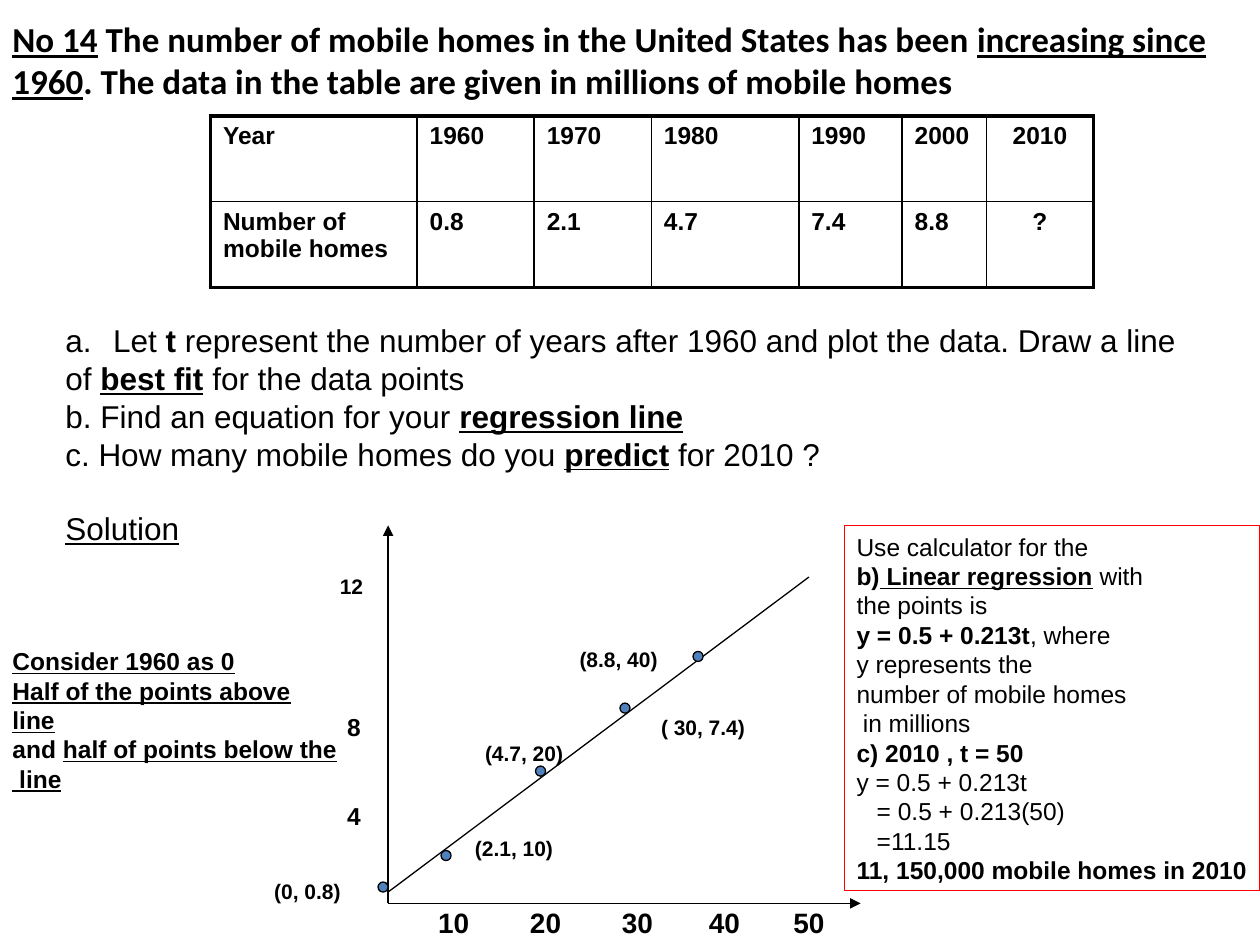
from lxml import etree
from pptx import Presentation
from pptx.dml.color import RGBColor
from pptx.enum.shapes import MSO_CONNECTOR, MSO_SHAPE
from pptx.enum.text import MSO_ANCHOR, PP_ALIGN
from pptx.oxml.ns import qn
from pptx.util import Inches, Pt

STRAIGHT = MSO_CONNECTOR.STRAIGHT
OVAL, RECTANGLE = MSO_SHAPE.OVAL, MSO_SHAPE.RECTANGLE
TOP, MIDDLE = MSO_ANCHOR.TOP, MSO_ANCHOR.MIDDLE
LEFT, CENTER = PP_ALIGN.LEFT, PP_ALIGN.CENTER

COLORS = {"black": "000000", "dot": "4F81BD", "frame": "FF0000"}

TITLE = [[
    ("No 14", "bu"),
    (" The number of mobile homes in the United States has been ", "b"),
    ("increasing since 1960", "bu"),
    (". The data in the table are given in millions of mobile homes", "b"),
]]
TABLE = [
    ["Year", "1960", "1970", "1980", "1990", "2000", "2010"],
    ["Number of mobile homes", "0.8", "2.1", "4.7", "7.4", "8.8", "?"],
]
COLUMN_WIDTHS = [1.64, 0.93, 0.93, 1.17, 0.82, 0.67, 0.85]
ROW_HEIGHT = 0.68
QUESTIONS = [
    [("Let ", ""), ("t ", "b"),
     ("represent the number of years after 1960 and plot the data. Draw a line", "")],
    [("of ", ""), ("best fit", "bu"), (" for the data points", "")],
    [("b. Find an equation for your ", ""), ("regression line", "bu")],
    [("c. How many mobile homes do you ", ""), ("predict", "bu"), (" for 2010 ?", "")],
    [("Solution", "u")],
]
NOTE = [
    [("Consider 1960 as 0", "bu")],
    [("Half of the points above\nline", "bu")],
    [("and ", "b"), ("half of points below the", "bu")],
    [(" line", "bu")],
]
ANSWER = [
    [("Use calculator for the", "")],
    [("b)", "b"), (" Linear regression", "bu"), (" with", "")],
    [("the points is", "")],
    [("y = 0.5 + 0.213t", "b"), (", where", "")],
    [("y represents the", "")],
    [("number of mobile homes", "")],
    [("in millions", "")],
    [("c) 2010 , t = 50", "b")],
    [("y = 0.5 + 0.213t", "")],
    [("= 0.5 + 0.213(50)", "")],
    [("=11.15", "")],
    [("11, 150,000 mobile homes in 2010", "b")],
]
ANSWER_INDENTS = {6: 0.05, 9: 0.16, 10: 0.16}

ORIGIN = (3.08, 7.17)
LINES = [
    (ORIGIN, (6.83, 7.17), True),
    (ORIGIN, (3.08, 4.17), True),
    ((3.08, 7.08), (6.42, 4.58), False),
]
DOT_SIZE = 0.08
DOTS = [(3, 7), (3.5, 6.75), (4.25, 6.08), (4.92, 5.58), (5.5, 5.17)]
LABELS = [
    ("(0, 0.8)", 2.44, 7.07, 12), ("(2.1, 10)", 4.08, 6.73, 12),
    ("(4.7, 20)", 4.16, 5.98, 12), ("( 30, 7.4)", 5.58, 5.77, 12),
    ("(8.8, 40)", 4.91, 5.23, 12),
    ("12", 2.79, 4.65, 12), ("8", 2.81, 5.77, 14), ("4", 2.81, 6.47, 14),
    ("10", 3.6, 7.32, 16), ("20", 4.33, 7.32, 16), ("30", 5.06, 7.32, 16),
    ("40", 5.75, 7.32, 16), ("50", 6.42, 7.32, 16),
]
LABEL_SIZE = (0.9, 0.3)


def color(name):
    return RGBColor.from_string(COLORS[name])


def write(frame, paragraphs, size, font="Arial", align=LEFT, anchor=TOP, wrap=True):
    frame.word_wrap = wrap
    frame.vertical_anchor = anchor
    for index, segments in enumerate(paragraphs):
        paragraph = frame.paragraphs[0] if index == 0 else frame.add_paragraph()
        paragraph.alignment = align
        paragraph.font.size = Pt(size)
        paragraph.font.name = font
        paragraph.font.color.rgb = color("black")
        for text, style in segments:
            for number, part in enumerate(text.split("\n")):
                if number:
                    paragraph.add_line_break()
                run = paragraph.add_run()
                run.text = part
                run.font.bold = "b" in style
                run.font.underline = "u" in style


def add_text(slide, box, paragraphs, size, **options):
    shape = slide.shapes.add_textbox(*map(Inches, box))
    write(shape.text_frame, paragraphs, size, **options)
    return shape


def add_shape(slide, kind, box, line, fill=None):
    shape = slide.shapes.add_shape(kind, *map(Inches, box))
    shape.shadow.inherit = False
    shape.line.color.rgb = color(line)
    shape.line.width = Pt(0.75)
    if fill:
        shape.fill.solid()
        shape.fill.fore_color.rgb = color(fill)
    else:
        shape.fill.background()
    return shape


def add_line(slide, start, end, arrow):
    line = slide.shapes.add_connector(STRAIGHT, *map(Inches, start + end))
    line.line.color.rgb = color("black")
    line.line.width = Pt(0.75)
    properties = line._element.spPr
    if arrow:
        etree.SubElement(properties.find(qn("a:ln")), qn("a:tailEnd"), type="triangle")
    etree.SubElement(properties, qn("a:effectLst"))


def set_borders(cell, widths):
    properties = cell._tc.get_or_add_tcPr()
    for index, (side, width) in enumerate(widths.items()):
        border = etree.Element(qn(f"a:ln{side}"), w=str(Pt(width)))
        fill = etree.SubElement(border, qn("a:solidFill"))
        etree.SubElement(fill, qn("a:srgbClr"), val=COLORS["black"])
        properties.insert(index, border)


def add_data_table(slide):
    last_row, last_column = len(TABLE) - 1, len(COLUMN_WIDTHS) - 1
    box = (1.67, 0.92, sum(COLUMN_WIDTHS), ROW_HEIGHT * len(TABLE))
    table = slide.shapes.add_table(
        len(TABLE), len(COLUMN_WIDTHS), *map(Inches, box)).table
    for column, width in zip(table.columns, COLUMN_WIDTHS):
        column.width = Inches(width)
    for r, values in enumerate(TABLE):
        table.rows[r].height = Inches(ROW_HEIGHT)
        for c, value in enumerate(values):
            cell = table.cell(r, c)
            align = CENTER if c == last_column else LEFT
            write(cell.text_frame, [[(value, "b")]], 14, align=align)
            cell.fill.background()
            set_borders(cell, {
                "L": 2.25 if c == 0 else 1,
                "R": 2.25 if c == last_column else 1,
                "T": 2.25 if r == 0 else 1,
                "B": 2.25 if r == last_row else 1,
            })


def main():
    presentation = Presentation()
    presentation.slide_width, presentation.slide_height = Inches(10), Inches(7.5)
    slide = presentation.slides.add_slide(presentation.slide_layouts[6])

    title = add_text(slide, (0, 0, 10, 1.25), TITLE, 20, font="Calibri")
    title.text_frame.margin_top = Inches(0.14)
    add_data_table(slide)

    questions = add_text(slide, (0.42, 2.5, 9.08, 2.2), QUESTIONS, 18)
    paragraphs = questions.text_frame.paragraphs
    numbered = paragraphs[0]._p.get_or_add_pPr()
    numbered.set("marL", str(Inches(0.38)))
    numbered.set("indent", str(-Inches(0.38)))
    bullet = etree.Element(qn("a:buAutoNum"), type="alphaLcPeriod")
    numbered.insert(0, bullet)
    paragraphs[-1].space_before = Pt(21)

    for start, end, arrow in LINES:
        add_line(slide, start, end, arrow)
    for left, top in DOTS:
        add_shape(slide, OVAL, (left, top, DOT_SIZE, DOT_SIZE), "black", "dot")
    width, height = LABEL_SIZE
    for text, x, y, size in LABELS:
        add_text(slide, (x - width / 2, y - height / 2, width, height),
                 [[(text, "b")]], size, align=CENTER, anchor=MIDDLE, wrap=False)

    answer = add_shape(slide, RECTANGLE, (6.7, 4.17, 3.3, 2.9), "frame")
    write(answer.text_frame, ANSWER, 14)
    answer.text_frame.margin_right = 0
    for index, indent in ANSWER_INDENTS.items():
        properties = answer.text_frame.paragraphs[index]._p.get_or_add_pPr()
        properties.set("marL", str(Inches(indent)))
    add_text(slide, (0, 5.08, 2.78, 1.03), NOTE, 14, wrap=False)

    presentation.save("out.pptx")


if __name__ == "__main__":
    main()
